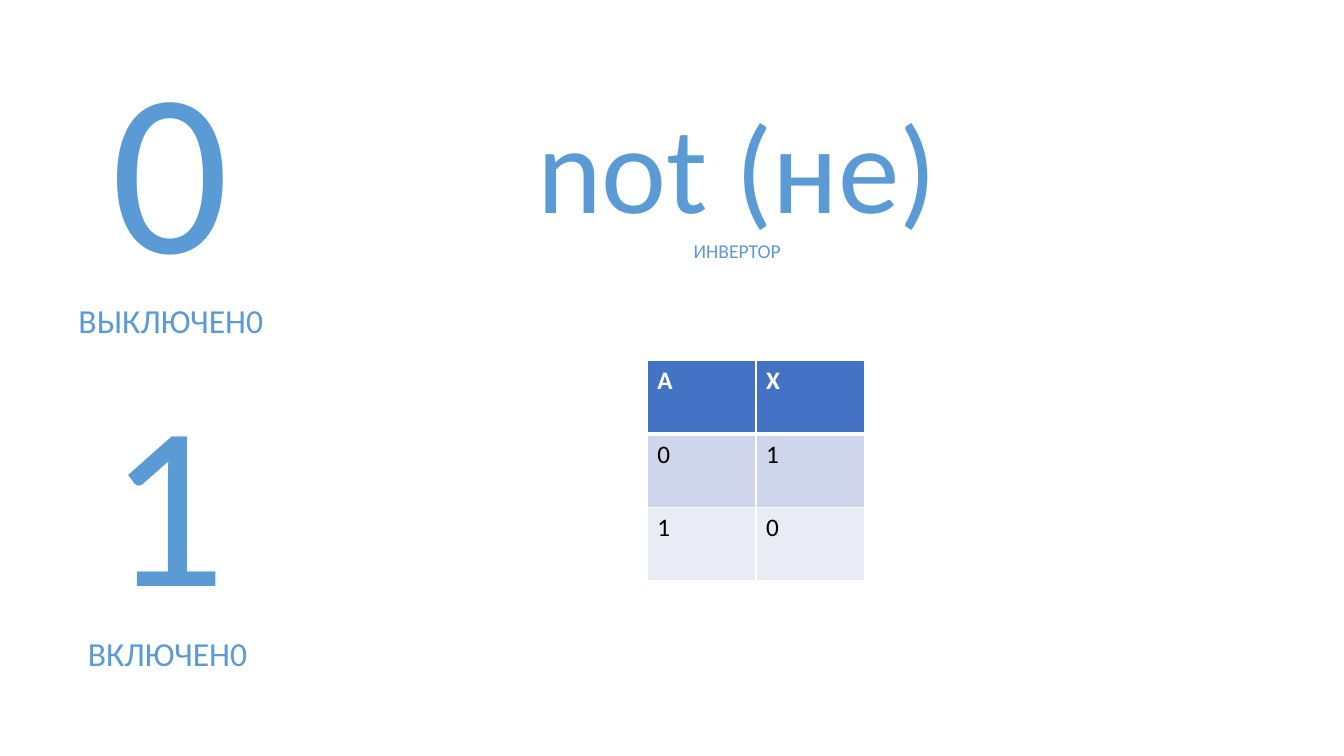
from dataclasses import dataclass

from lxml.etree import SubElement
from pptx import Presentation
from pptx.dml.color import RGBColor
from pptx.enum.text import MSO_ANCHOR, MSO_AUTO_SIZE, PP_ALIGN
from pptx.oxml.ns import qn
from pptx.util import Cm, Pt

FONT = "Calibri"
BLUE = "5B9BD5"
WHITE = "FFFFFF"
BLACK = "000000"
ROW_FILLS = ("4472C4", "CFD5EA", "E9EBF5")
TRUTH_TABLE = (("A", "X"), ("0", "1"), ("1", "0"))
COLUMN_WIDTH = 2.74
ROW_HEIGHT = 1.85


@dataclass(frozen=True)
class Caption:
    symbol: str
    symbol_size: int
    label: str
    label_size: int
    left: float
    top: float
    width: float
    height: float


INVERTER = Caption("not (не)", 88, "ИНВЕРТОР", 14, 13.26, 2.16, 10.64, 4.62)
STATES = (
    Caption("1", 166, "ВКЛЮЧЕН0", 24, 1.75, 8.79, 4.95, 8.38),
    Caption("0", 166, "ВЫКЛЮЧЕН0", 24, 1.37, 0.41, 5.87, 8.38),
)


def rgb(value: str) -> RGBColor:
    return RGBColor.from_string(value)


def write(paragraph, text: str, *, size: int, color: str = BLUE,
          bold: bool = False, align=PP_ALIGN.CENTER) -> None:
    paragraph.alignment = align
    run = paragraph.add_run()
    run.text = text
    run.font.name = FONT
    run.font.size = Pt(size)
    run.font.bold = bold
    run.font.color.rgb = rgb(color)


def fill_caption(shape, caption: Caption) -> None:
    shape.left, shape.top = Cm(caption.left), Cm(caption.top)
    shape.width, shape.height = Cm(caption.width), Cm(caption.height)
    frame = shape.text_frame
    frame.word_wrap = False
    frame.auto_size = MSO_AUTO_SIZE.SHAPE_TO_FIT_TEXT
    frame.vertical_anchor = MSO_ANCHOR.TOP
    write(frame.paragraphs[0], caption.symbol, size=caption.symbol_size)
    write(frame.add_paragraph(), caption.label, size=caption.label_size)


def add_borders(cell, *, top: int, bottom: int) -> None:
    properties = cell._tc.get_or_add_tcPr()
    for side, width in (("L", 1), ("R", 1), ("T", top), ("B", bottom)):
        line = SubElement(properties, qn(f"a:ln{side}"), w=str(Pt(width)))
        solid = SubElement(line, qn("a:solidFill"))
        SubElement(solid, qn("a:srgbClr"), val=WHITE)


def add_truth_table(slide) -> None:
    rows, columns = len(TRUTH_TABLE), len(TRUTH_TABLE[0])
    table = slide.shapes.add_table(
        rows, columns, Cm(16.31), Cm(9.09),
        Cm(COLUMN_WIDTH * columns), Cm(ROW_HEIGHT * rows)).table
    for row, (values, fill) in enumerate(zip(TRUTH_TABLE, ROW_FILLS)):
        header = row == 0
        for column, value in enumerate(values):
            cell = table.cell(row, column)
            add_borders(cell, top=3 if row == 1 else 1, bottom=3 if header else 1)
            cell.fill.solid()
            cell.fill.fore_color.rgb = rgb(fill)
            write(cell.text_frame.paragraphs[0], value, size=18, bold=header,
                  color=WHITE if header else BLACK, align=PP_ALIGN.LEFT)


def main() -> None:
    presentation = Presentation()
    presentation.slide_width, presentation.slide_height = Cm(33.87), Cm(19.05)
    slide = presentation.slides.add_slide(
        presentation.slide_layouts.get_by_name("Title Only"))
    fill_caption(slide.shapes.title, INVERTER)
    for state in STATES:
        fill_caption(slide.shapes.add_textbox(0, 0, 0, 0), state)
    add_truth_table(slide)
    presentation.save("out.pptx")


if __name__ == "__main__":
    main()
